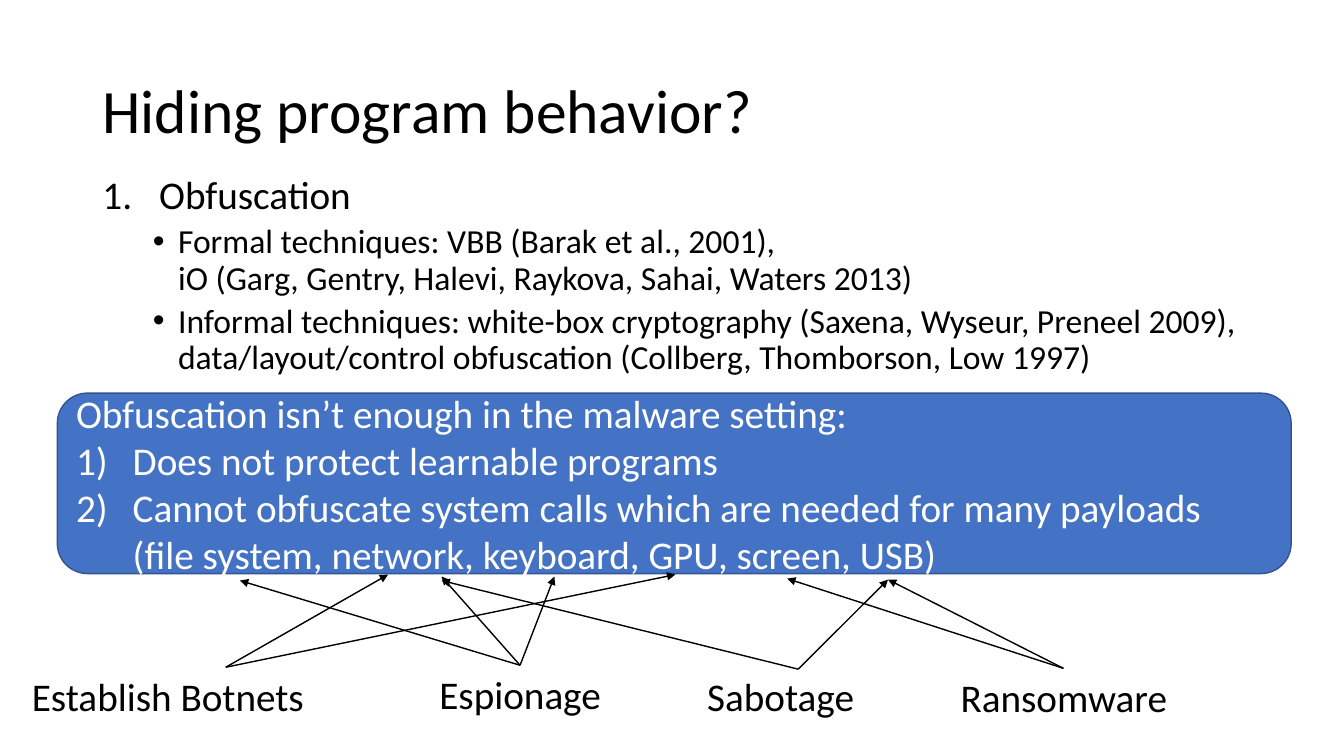
"""Build a slide on why obfuscation alone does not hide malware behavior."""
from lxml.etree import SubElement
from pptx import Presentation
from pptx.dml.color import RGBColor
from pptx.enum.shapes import MSO_CONNECTOR, MSO_SHAPE
from pptx.enum.text import MSO_ANCHOR, MSO_AUTO_SIZE, PP_ALIGN
from pptx.oxml.ns import qn
from pptx.util import Pt

BLACK = RGBColor(0x00, 0x00, 0x00)
WHITE = RGBColor(0xFF, 0xFF, 0xFF)
BLUE = RGBColor(0x44, 0x72, 0xC4)
DARK_BLUE = RGBColor(0x32, 0x54, 0x91)
FONT = "Calibri"

TITLE = "Hiding program behavior?"
TECHNIQUES = [
    (0, "Obfuscation"),
    (1, """Formal techniques: VBB (Barak et al., 2001),
iO (Garg, Gentry, Halevi, Raykova, Sahai, Waters 2013)"""),
    (1, "Informal techniques: white-box cryptography (Saxena, Wyseur, Preneel 2009), "
        "data/layout/control obfuscation (Collberg, Thomborson, Low 1997)"),
]
LIMITS_HEADING = "Obfuscation isn’t enough in the malware setting:"
LIMITS = [
    "Does not protect learnable programs",
    """Cannot obfuscate system calls which are needed for many payloads
(file system, network, keyboard, GPU, screen, USB)""",
]
# Each payload: label, left, top, width, arrow start, arrow tips.
PAYLOADS = [
    ("Establish Botnets", 14.4, 476.6, 211, (161.3, 476.6),
     [(277.2, 410.4), (482.4, 410.4)]),
    ("Espionage", 306, 475.2, 131, (371.5, 475.2),
     [(171.4, 414.7), (315.4, 411.8), (396, 411.8)]),
    ("Sabotage", 497.5, 476.6, 120.2, (570.2, 478),
     [(634.3, 414), (315.4, 414.7)]),
    ("Ransomware", 678.2, 477.4, 163.4, (759.6, 477.4),
     [(562.3, 413.3), (634.3, 414)]),
]


def place(part, left, top, width, height):
    part.left, part.top = Pt(left), Pt(top)
    part.width, part.height = Pt(width), Pt(height)


def write(paragraph, text, size, color, align=PP_ALIGN.LEFT):
    paragraph.text = text
    paragraph.alignment = align
    for run in paragraph.runs:
        run.font.name, run.font.size = FONT, Pt(size)
        run.font.color.rgb = color
    for line_break in paragraph._p.findall(qn("a:br")):
        SubElement(line_break, qn("a:rPr"), sz=str(size * 100))


def tighten(paragraph, before):
    paragraph.line_spacing = 0.9
    paragraph.space_before = Pt(before)


def add_marker(paragraph, margin, hanging, tag, **marker):
    properties = paragraph._p.get_or_add_pPr()
    properties.set("marL", str(Pt(margin)))
    properties.set("indent", str(-Pt(hanging)))
    SubElement(properties, qn("a:buFont"), typeface="Arial" if tag == "a:buChar" else "+mj-lt")
    SubElement(properties, qn(tag), **marker)


def add_arrow(slide, start, tip):
    arrow = slide.shapes.add_connector(
        MSO_CONNECTOR.STRAIGHT, *(Pt(value) for value in start + tip))
    arrow.line.color.rgb = BLACK
    arrow.line.width = Pt(1)
    SubElement(arrow.line._get_or_add_ln(), qn("a:tailEnd"), type="triangle")
    SubElement(arrow._element.spPr, qn("a:effectLst"))


def fill_placeholders(slide):
    title, body = slide.placeholders
    place(title, 66, 28.8, 828, 104.4)
    title.text_frame.vertical_anchor = MSO_ANCHOR.MIDDLE
    title.text_frame.auto_size = MSO_AUTO_SIZE.NONE
    heading = title.text_frame.paragraphs[0]
    write(heading, TITLE, 44, BLACK)
    tighten(heading, 0)

    place(body, 66, 121.7, 828, 154.8)
    frame = body.text_frame
    frame.auto_size = MSO_AUTO_SIZE.NONE
    for index, (level, text) in enumerate(TECHNIQUES):
        item = frame.add_paragraph() if index else frame.paragraphs[0]
        item.level = level
        write(item, text, 24 if level else 28, BLACK)
        tighten(item, 5 if level else 10)
        if level:
            add_marker(item, 54, 18, "a:buChar", char="•")
        else:
            add_marker(item, 40.5, 40.5, "a:buAutoNum", type="arabicPeriod")


def add_limits(slide):
    panel = slide.shapes.add_shape(
        MSO_SHAPE.ROUNDED_RECTANGLE, Pt(41), Pt(280.8), Pt(881.3), Pt(128.9))
    panel.shadow.inherit = False
    panel.fill.solid()
    panel.fill.fore_color.rgb = BLUE
    panel.line.color.rgb = DARK_BLUE
    panel.line.width = Pt(1)
    frame = panel.text_frame
    frame.word_wrap = True
    write(frame.paragraphs[0], LIMITS_HEADING, 28, WHITE)
    for text in LIMITS:
        limit = frame.add_paragraph()
        write(limit, text, 28, WHITE)
        add_marker(limit, 40.5, 40.5, "a:buAutoNum", type="arabicParenR")


def add_payloads(slide):
    for label, left, top, width, start, tips in PAYLOADS:
        payload = slide.shapes.add_textbox(Pt(left), Pt(top), Pt(width), Pt(41.2))
        payload.text_frame.word_wrap = False
        payload.text_frame.auto_size = MSO_AUTO_SIZE.SHAPE_TO_FIT_TEXT
        write(payload.text_frame.paragraphs[0], label, 28, BLACK, PP_ALIGN.CENTER)
        for tip in tips:
            add_arrow(slide, start, tip)


def main():
    deck = Presentation()
    deck.slide_width, deck.slide_height = Pt(960), Pt(540)
    slide = deck.slides.add_slide(deck.slide_layouts[1])
    fill_placeholders(slide)
    add_limits(slide)
    add_payloads(slide)
    deck.save("out.pptx")


if __name__ == "__main__":
    main()
